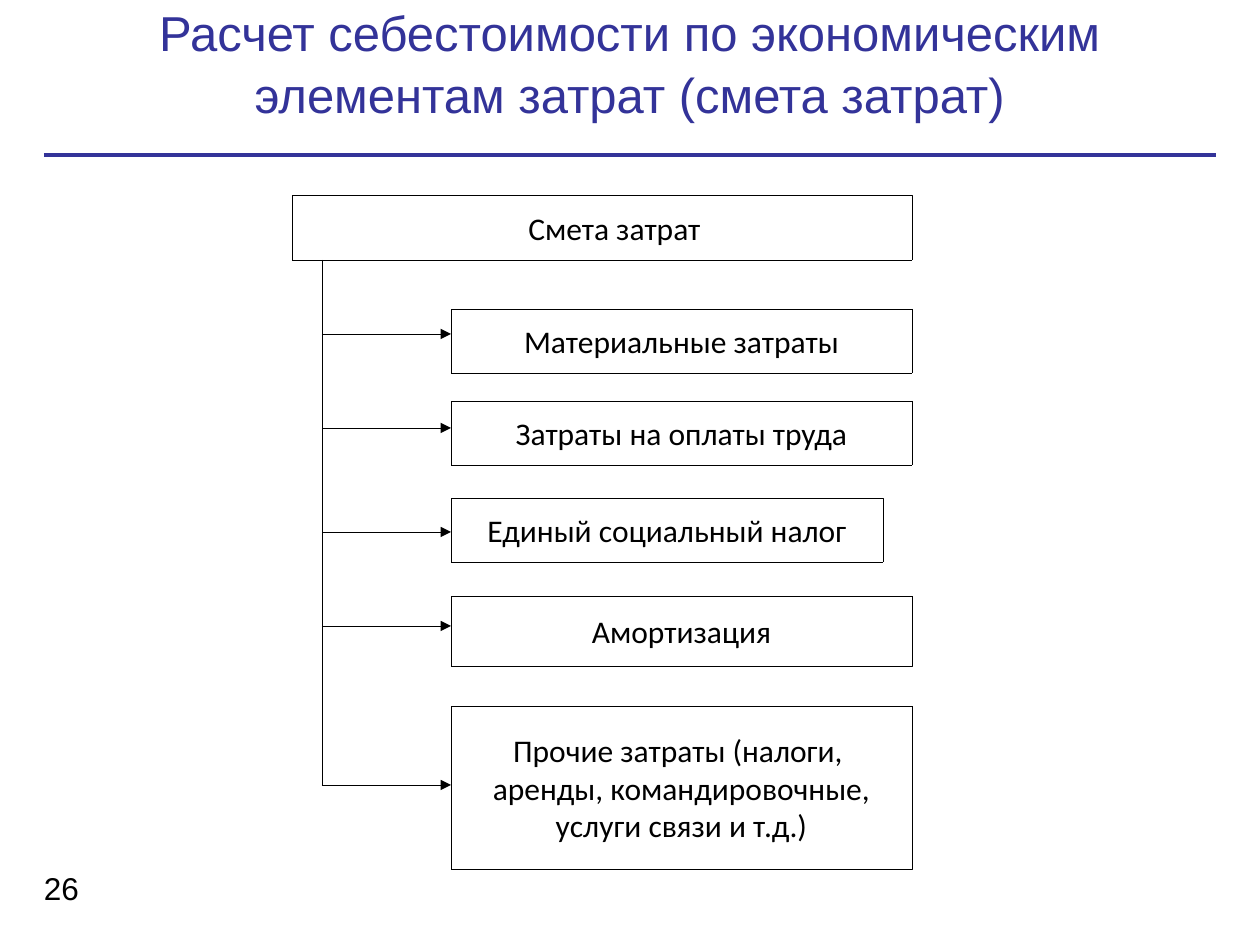
import pptx
import pptx.util
import pptx.dml.color
import pptx.enum.dml
import pptx.enum.shapes
import pptx.enum.text
import pptx.oxml.ns
from lxml import etree

PX = 914400 // 126
BLUE, BLACK = "333399", "000000"
LEFT, RIGHT = 451, 912
STEM = 322

TITLE = "Расчет себестоимости по экономическим элементам затрат (смета затрат)"
NUMBER = "26"
HEAD = ("Смета затрат", 292, 195, RIGHT, 260)
ITEMS = [
    ("Материальные затраты", 309, 64, RIGHT, 334),
    ("Затраты на оплаты труда", 401, 64, RIGHT, 428),
    ("Единый социальный налог", 498, 64, 883, 532),
    ("Амортизация", 596, 70, RIGHT, 626),
    ("Прочие затраты (налоги, \nаренды, командировочные,\n услуги связи и т.д.) ", 706, 163, RIGHT, 785),
]

CENTER = pptx.enum.text.PP_ALIGN.CENTER
MIDDLE = pptx.enum.text.MSO_ANCHOR.MIDDLE
FRAME = dict(margin_left=0, margin_right=0, margin_top=0, margin_bottom=0)


def color(code):
    return pptx.dml.color.RGBColor.from_string(code)


def style(thing, values):
    for name, value in values.items():
        setattr(thing, name, value)


def write(shape, text, font, size, code, frame, para):
    box = shape.text_frame
    style(box, {**FRAME, **frame})
    box.text = text
    for line in box.paragraphs:
        style(line, para)
        style(line.font, dict(name=font, size=pptx.util.Pt(size)))
        line.font.color.rgb = color(code)


def stroke(line, code, width, dotted):
    line.color.rgb = color(code)
    line.width = pptx.util.Pt(width)
    if dotted:
        line.dash_style = pptx.enum.dml.MSO_LINE.ROUND_DOT


def label(shapes, text, area, size, code, frame, para):
    shape = shapes.add_textbox(*(n * PX for n in area))
    write(shape, text, "Arial", size, code, frame, para)


def block(shapes, text, x, y, right, bottom):
    kind = pptx.enum.shapes.MSO_SHAPE.RECTANGLE
    shape = shapes.add_shape(kind, x * PX, y * PX, (right - x) * PX, (bottom - y) * PX)
    shape.shadow.inherit = False
    shape.fill.background()
    stroke(shape.line, BLACK, 0.25, True)
    frame = dict(word_wrap=False, vertical_anchor=MIDDLE)
    write(shape, text, "Calibri", 18, BLACK, frame, dict(alignment=CENTER))
    return shape


def link(shapes, x, y, right, bottom, code=BLACK, width=0.25, dotted=True, arrow=False):
    kind = pptx.enum.shapes.MSO_CONNECTOR.STRAIGHT
    wire = shapes.add_connector(kind, x * PX, y * PX, right * PX, bottom * PX)
    stroke(wire.line, code, width, dotted)
    qn = pptx.oxml.ns.qn
    if arrow:
        etree.SubElement(wire.line._get_or_add_ln(), qn("a:tailEnd"), type="triangle")
    etree.SubElement(wire._element.spPr, qn("a:effectLst"))


def main():
    deck = pptx.Presentation()
    style(deck, dict(slide_width=1260 * PX, slide_height=945 * PX))
    shapes = deck.slides.add_slide(deck.slide_layouts[6]).shapes

    link(shapes, 44, 155, 1216, 155, BLUE, 2, False)
    label(shapes, TITLE, (44, 0, 1171, 155), 28, BLUE,
          dict(word_wrap=True), dict(alignment=CENTER, line_spacing=1.05))
    label(shapes, NUMBER, (44, 869, 35, 38), 18, BLACK, dict(word_wrap=False), {})

    head = block(shapes, *HEAD)
    props = head.text_frame.paragraphs[0]._p.get_or_add_pPr()
    style_indent = dict(marL=0, indent=25 * PX)
    for name, value in style_indent.items():
        props.set(name, str(value))

    for text, top, height, right, level in ITEMS:
        block(shapes, text, LEFT, top, right, top + height)
        link(shapes, STEM, level, LEFT, level, arrow=True)
    link(shapes, STEM, HEAD[-1], STEM, ITEMS[-1][-1])

    deck.save("out.pptx")


if __name__ == "__main__":
    main()
